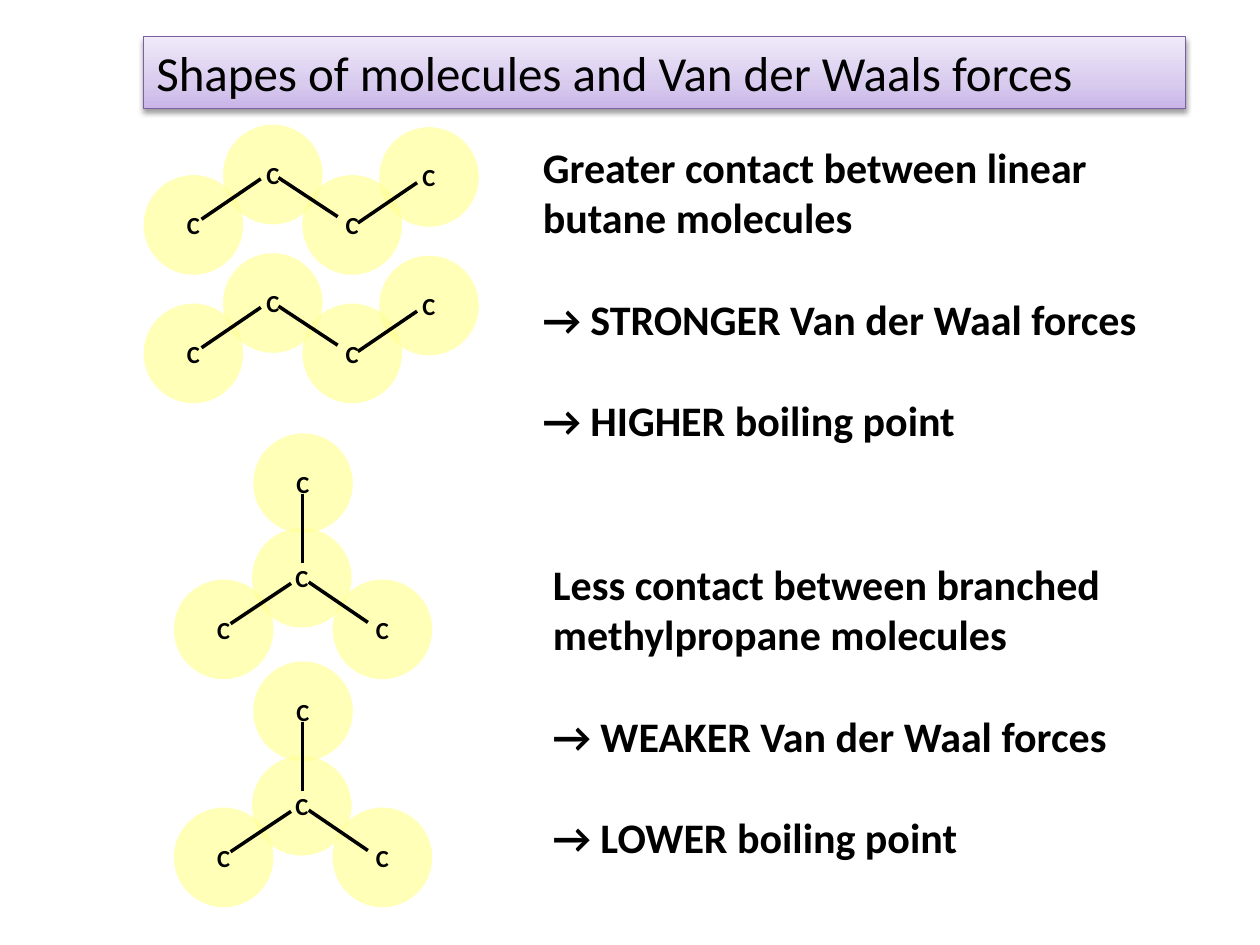
from copy import deepcopy

from lxml import etree
from pptx import Presentation
from pptx import util as u
from pptx.dml.color import RGBColor
from pptx.enum import shapes, text
from pptx.oxml import parse_xml
from pptx.oxml.ns import nsdecls, qn

FONT = "Calibri"
BALL = 0.79
CHAIN = {
    "atoms": [(0, 0.4), (1.87, 0.02), (1.26, 0.4), (0.63, 0)],
    "bonds": [(0.46, 0.75, 0.93, 0.43), (1.07, 0.42, 1.54, 0.73),
              (1.7, 0.78, 2.17, 0.46)],
}
BRANCH = {
    "atoms": [(0.62, 0.75), (0, 1.16), (0.63, 0), (1.26, 1.16)],
    "bonds": [(0.45, 1.51, 0.93, 1.19), (1.07, 1.18, 1.54, 1.5),
              (1.02, 1.03, 1.02, 0.48)],
}


def color(code):
    """Turn a hex string into a colour."""
    return RGBColor.from_string(code)


def box(*sides):
    """Turn inches into lengths."""
    return [u.Inches(side) for side in sides]


def style(par, size, bold):
    """Format the runs of a paragraph."""
    for run in par.runs:
        run.font.name = FONT
        run.font.size = u.Pt(size)
        run.font.bold = bold
        run.font.color.rgb = color("000000")


def add_atom(group, left, top):
    """Draw one carbon atom as a translucent ball."""
    ball = group.shapes.add_shape(
        shapes.MSO_SHAPE.OVAL, *box(left, top, BALL, BALL))
    ball.shadow.inherit = False
    ball.line.fill.background()
    ball.fill.solid()
    ball.fill.fore_color.rgb = color("FFFF99")
    tint = ball.fill._xPr.find(".//" + qn("a:srgbClr"))
    etree.SubElement(tint, qn("a:alpha")).set("val", "70000")
    frame = ball.text_frame
    frame.word_wrap = False
    frame.vertical_anchor = text.MSO_ANCHOR.MIDDLE
    frame.text = "C"
    par = frame.paragraphs[0]
    par.alignment = text.PP_ALIGN.CENTER
    style(par, 14, True)


def add_bond(group, *ends):
    """Draw one bond between two atoms."""
    bond = group.shapes.add_connector(
        shapes.MSO_CONNECTOR.STRAIGHT, *box(*ends))
    bond.line.color.rgb = color("000000")
    bond.line.width = u.Pt(2)
    etree.SubElement(bond._element.spPr, qn("a:effectLst"))


def add_model(slide, kind, left, top):
    """Draw a molecule as a group of atoms and bonds."""
    group = slide.shapes.add_group_shape()
    for x, y in kind["atoms"]:
        add_atom(group, left + x, top + y)
    for x1, y1, x2, y2 in kind["bonds"]:
        add_bond(group, left + x1, top + y1, left + x2, top + y2)


def add_notes(slide, area, lines):
    """Write bold statements one blank line apart."""
    frame = slide.shapes.add_textbox(*box(*area)).text_frame
    frame.word_wrap = True
    frame.text = "\n".join(lines)
    for i, par in enumerate(frame.paragraphs):
        if i:
            par.space_before = u.Pt(29.3)
        style(par, 24, True)


def set_title(slide, area, words):
    """Format the title as a shaded banner."""
    title = slide.shapes.title
    title.left, title.top, title.width, title.height = box(*area)
    fill = title.fill
    fill.gradient()
    fill.gradient_angle = 90
    stops = title._element.spPr.find(".//" + qn("a:gsLst"))
    stops.append(deepcopy(stops[-1]))
    shades = [(0, "C9B5E8"), (0.35, "D8CBEE"), (1, "F0EAF9")]
    for stop, (place, shade) in zip(fill.gradient_stops, shades):
        stop.position = place
        stop.color.rgb = color(shade)
    title.line.color.rgb = color("7D60A0")
    title.line.width = u.Pt(0.75)
    title._element.spPr.append(parse_xml(
        f'<a:effectLst {nsdecls("a")}><a:outerShdw blurRad="40000" '
        'dist="20000" dir="5400000" rotWithShape="0">'
        '<a:srgbClr val="000000"><a:alpha val="38000"/></a:srgbClr>'
        '</a:outerShdw></a:effectLst>'))
    frame = title.text_frame
    frame.text = words
    frame.word_wrap = True
    frame.auto_size = text.MSO_AUTO_SIZE.NONE
    frame.vertical_anchor = text.MSO_ANCHOR.TOP
    par = frame.paragraphs[0]
    par.alignment = text.PP_ALIGN.LEFT
    style(par, 28, False)


def main():
    """Build the slide and save it."""
    deck = Presentation()
    deck.slide_width, deck.slide_height = box(10, 7.5)
    slide = deck.slides.add_slide(deck.slide_layouts[5])
    set_title(slide, (1.14, 0.29, 8.27, 0.57),
              "Shapes of molecules and Van der Waals forces")
    for row in range(2):
        add_model(slide, CHAIN, 1.14, 0.99 + 1.02 * row)
        add_model(slide, BRANCH, 1.38, 3.44 + 1.81 * row)
    add_notes(slide, (4.21, 1.07, 5.2, 2.52), [
        "Greater contact between linear butane molecules",
        "→ STRONGER Van der Waal forces",
        "→ HIGHER boiling point"])
    add_notes(slide, (4.29, 4.38, 5.35, 3.2), [
        "Less contact between branched methylpropane molecules",
        "→ WEAKER Van der Waal forces",
        "→ LOWER boiling point"])
    deck.save("out.pptx")


if __name__ == "__main__":
    main()
